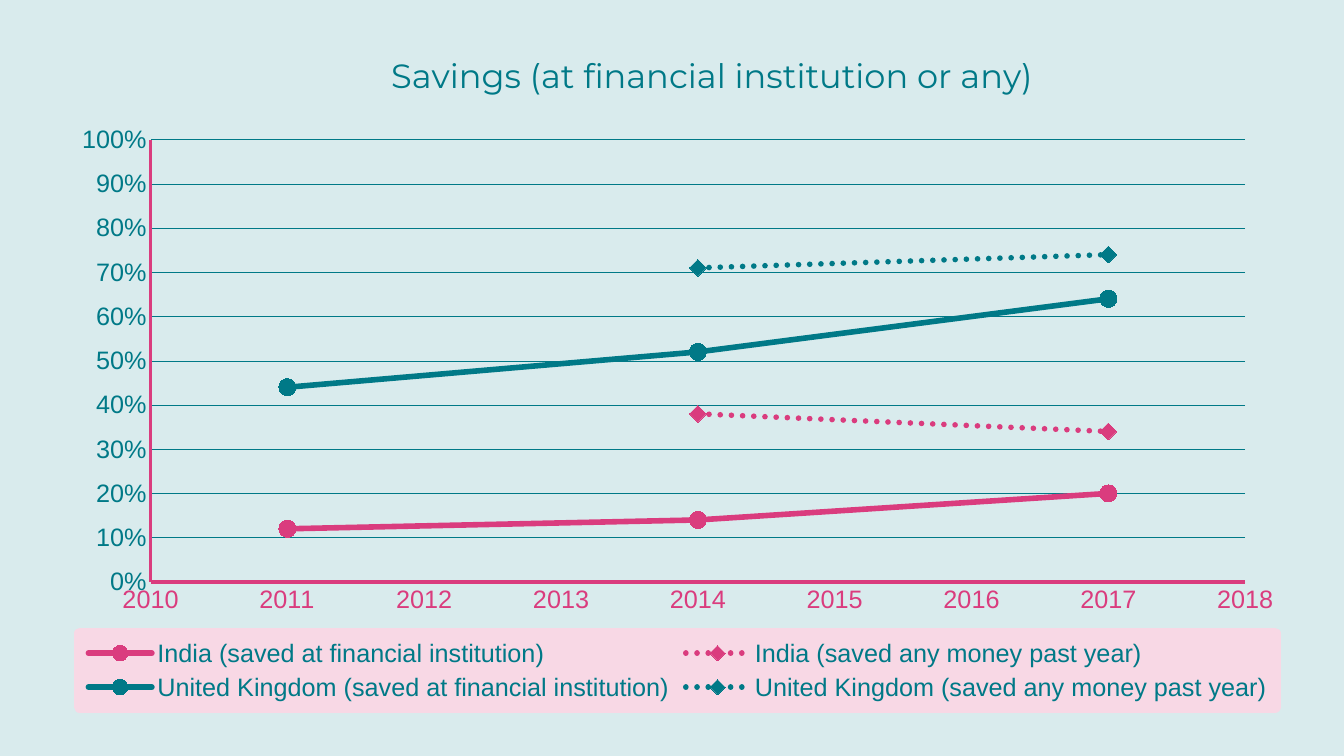
from pptx import Presentation
from pptx.chart.data import XyChartData
from pptx.dml.color import RGBColor
from pptx.enum.chart import XL_CHART_TYPE, XL_LEGEND_POSITION, XL_MARKER_STYLE, XL_TICK_MARK
from pptx.enum.dml import MSO_LINE
from pptx.oxml import parse_xml
from pptx.oxml.ns import nsdecls, qn
from pptx.util import Inches, Pt

SCATTER = XL_CHART_TYPE.XY_SCATTER_LINES
BOTTOM = XL_LEGEND_POSITION.BOTTOM
CIRCLE, DIAMOND = XL_MARKER_STYLE.CIRCLE, XL_MARKER_STYLE.DIAMOND
NO_TICK = XL_TICK_MARK.NONE
DOTS = MSO_LINE.ROUND_DOT

THEME = {
    "teal": RGBColor.from_string("007987"),
    "pink": RGBColor.from_string("DA3C7E"),
    "back": RGBColor.from_string("D9EBED"),
    "panel": "F8D8E5",
    "font": "Arial",
    "head": "Montserrat",
    "text": Pt(18),
    "title": Pt(24),
}


def style(font, color, size=THEME["text"], name=THEME["font"]):
    font.name, font.size, font.bold = name, size, False
    font.color.rgb = color


def place(node, spot, box, target=""):
    """Give a chart part a fixed layout, as shares of the chart area."""
    for old in node.findall(qn("c:layout")):
        node.remove(old)
    tags = "".join(f'<c:{tag}Mode val="edge"/>' for tag in "xy")
    tags += "".join(f'<c:{tag} val="{val}"/>' for tag, val in zip("xywh", box))
    node.insert(spot, parse_xml(
        f'<c:layout {nsdecls("c")}><c:manualLayout>{target}{tags}'
        '</c:manualLayout></c:layout>'))


deck = Presentation()
deck.slide_width, deck.slide_height = Inches(13.33), Inches(7.5)
slide = deck.slides.add_slide(deck.slide_layouts[6])
slide.background.fill.solid()
slide.background.fill.fore_color.rgb = THEME["back"]

# Savings data: name, colour, dotted or not, share by year
YEARS = (2011, 2014, 2017)
SERIES = [
    ("India (saved at financial institution)", "pink", False, (0.12, 0.14, 0.20)),
    ("India (saved any money past year)", "pink", True, (None, 0.38, 0.34)),
    ("United Kingdom (saved at financial institution)", "teal", False, (0.44, 0.52, 0.64)),
    ("United Kingdom (saved any money past year)", "teal", True, (None, 0.71, 0.74)),
]
data = XyChartData(number_format="0%")
for name, _, _, shares in SERIES:
    row = data.add_series(name)
    for year, share in zip(YEARS, shares):
        row.add_data_point(year, share)

chart = slide.shapes.add_chart(SCATTER, Inches(0.57), Inches(0.43),
                               Inches(12.31), Inches(6.64), data).chart
style(chart.font, THEME["teal"])

# Years without a share stay empty
for point in list(chart._chartSpace.iter(qn("c:pt"))):
    if point.findtext(qn("c:v")) == "None":
        point.getparent().remove(point)

# Lines and markers
for plot, (_, tone, dotted, _) in zip(chart.plots[0].series, SERIES):
    color = THEME[tone]
    plot.smooth = False
    line = plot.format.line
    line.width = Pt(4)
    line.color.rgb = color
    if dotted:
        line.dash_style = DOTS
    line._get_or_add_ln().set("cap", "rnd")
    mark = plot.marker
    mark.style, mark.size = DIAMOND if dotted else CIRCLE, 12
    mark.format.fill.solid()
    mark.format.fill.fore_color.rgb = color
    mark.format.line.color.rgb = color

# Axes
for axis, low, high, step, form, tone in (
        (chart.category_axis, 2010, 2018, 1, "General", "pink"),
        (chart.value_axis, 0, 1, 0.1, "0%", "teal")):
    axis.minimum_scale, axis.maximum_scale, axis.major_unit = low, high, step
    axis.major_tick_mark = axis.minor_tick_mark = NO_TICK
    axis.has_major_gridlines = tone == "teal"
    axis.tick_labels.number_format = form
    axis.tick_labels.number_format_is_linked = False
    style(axis.tick_labels.font, THEME[tone])
    axis.format.line.width = Pt(2.5)
    axis.format.line.color.rgb = THEME["pink"]
grid = chart.value_axis.major_gridlines.format.line
grid.width = Pt(0.25)
grid.color.rgb = THEME["teal"]
place(chart._chartSpace.chart.plotArea, 0, (0.075, 0.144, 0.882, 0.661),
      '<c:layoutTarget val="inner"/>')

# Title
chart.has_title = True
title = chart.chart_title
run = title.text_frame.paragraphs[0].add_run()
run.text = "Savings (at financial institution or any)"
style(run.font, THEME["teal"], THEME["title"], THEME["head"])
place(title._element, 1, (0.264, 0.004))

# Legend on a panel whose thick round-joined outline softens the corners
chart.has_legend = True
legend = chart.legend
legend.position, legend.include_in_layout = BOTTOM, False
style(legend.font, THEME["teal"])
place(legend._element, 1, (0.018, 0.882, 0.963, 0.11))
paint = f'<a:solidFill><a:srgbClr val="{THEME["panel"]}"/></a:solidFill>'
panel = parse_xml(f'<c:spPr {nsdecls("c", "a")}>{paint}'
                  f'<a:ln w="{Pt(8)}">{paint}<a:round/></a:ln></c:spPr>')
legend._element.find(qn("c:txPr")).addprevious(panel)

deck.save("out.pptx")
